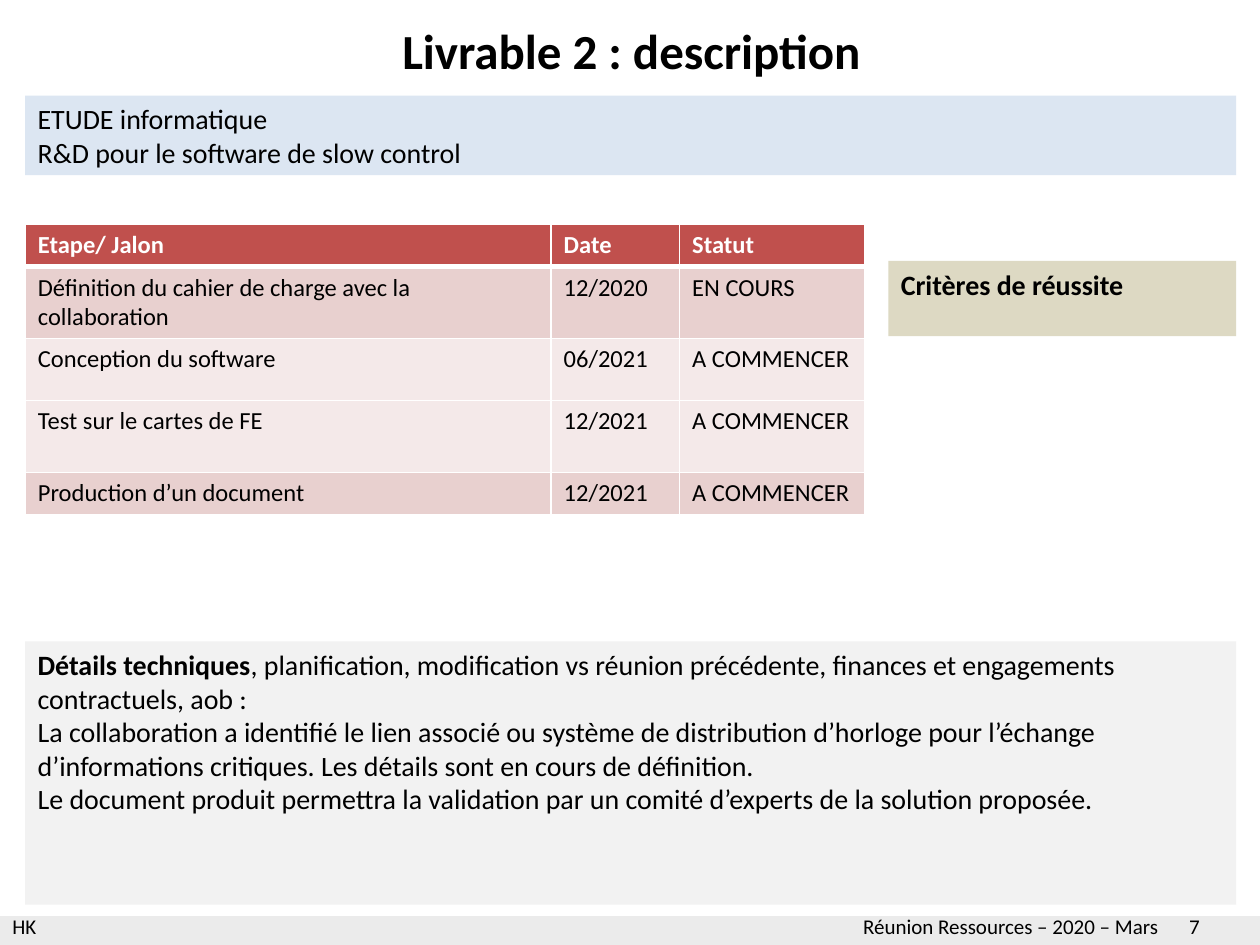
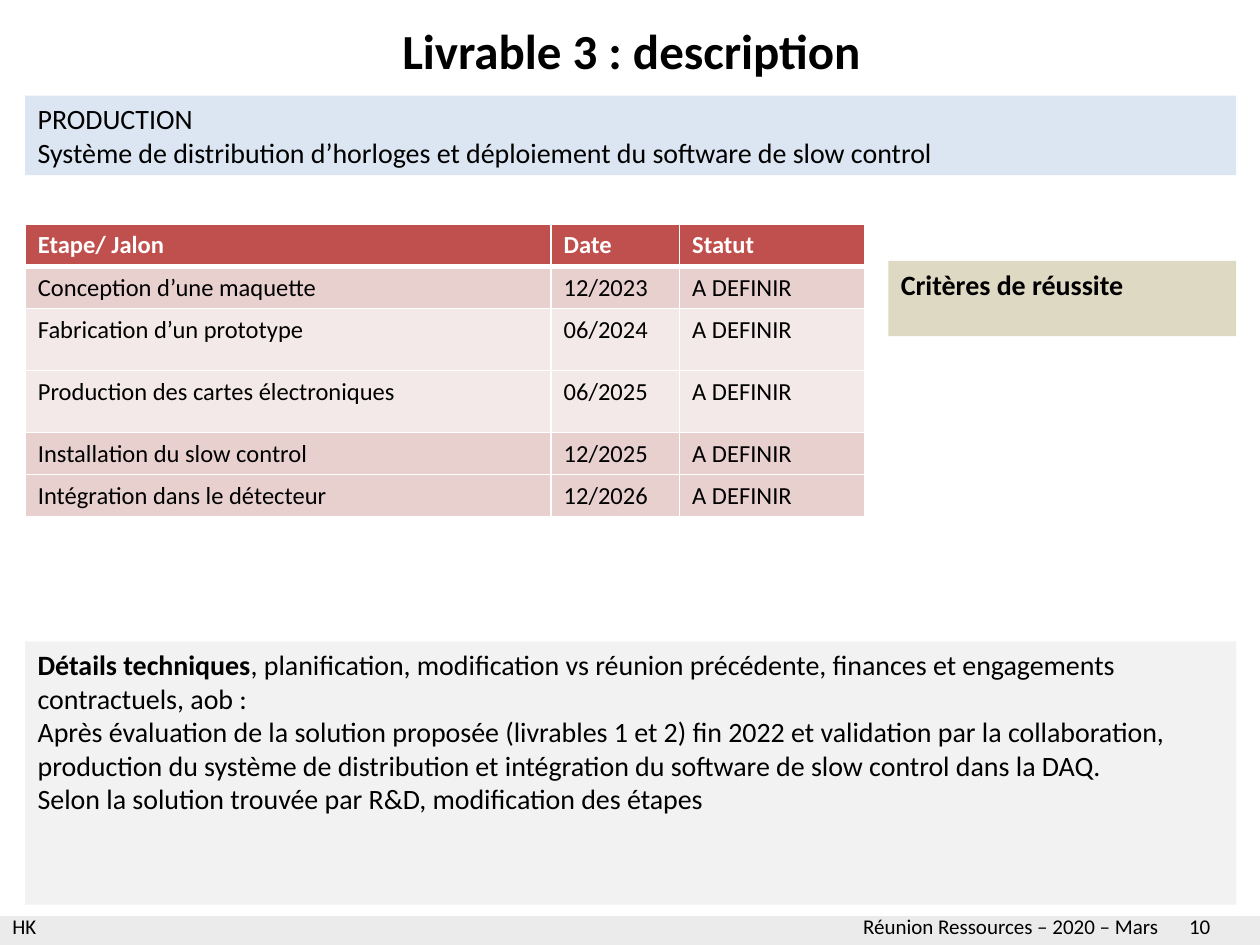
from collections import namedtuple

from lxml.etree import SubElement
from pptx import Presentation
from pptx.dml.color import RGBColor
from pptx.enum.shapes import MSO_SHAPE as Preset
from pptx.enum.text import MSO_ANCHOR as Anchor, PP_ALIGN as Align
from pptx.oxml.ns import qn
from pptx.util import Cm, Pt

# Shared style
FONT = "Calibri"
BLACK = RGBColor(0x00, 0x00, 0x00)
WHITE = RGBColor(0xFF, 0xFF, 0xFF)
BLUE = RGBColor(0xDC, 0xE6, 0xF2)
GREY = RGBColor(0xF2, 0xF2, 0xF2)
SAND = RGBColor(0xDD, 0xD9, 0xC3)
RED = RGBColor(0xC0, 0x50, 0x4D)
PINK = RGBColor(0xE8, 0xD0, 0xCF)
PALE_PINK = RGBColor(0xF4, 0xE9, 0xE9)
FOOTER_GREY = RGBColor(0xD9, 0xD9, 0xD9)

# Page regions, in centimetres
Box = namedtuple("Box", "left top width height")
TITLE = Box(1.3, 0.13, 22.86, 1.75)
SUMMARY = Box(0.51, 1.93, 24.41, 1.6)
MILESTONES = Box(0.51, 4.52, 16.92, 5.8)
CRITERIA = Box(17.91, 5.26, 7.01, 1.52)
DETAILS = Box(0.51, 12.93, 24.41, 5.31)
FOOTER = Box(0, 18.29, 25.4, 0.76)

# Milestone table
HEADINGS = ("Etape/ Jalon", "Date", "Statut")
COLUMN_WIDTHS = (10.6, 2.59, 3.73)
LOW, MEDIUM, TALL = 0.85, 1.25, 1.45
PALE_ROWS = (2, 3)
THIN, THICK = Pt(0.96), Pt(3)

DETAILS_LEAD = "Détails techniques"
DETAILS_TOPICS = (", planification, modification vs réunion précédente, "
                  "finances et engagements contractuels, aob :")

Deliverable = namedtuple("Deliverable", "title page_number summary milestones details")
DELIVERABLES = (
    Deliverable(
        "Livrable 2 : description", 7,
        ("ETUDE informatique", "R&D pour le software de slow control"),
        (("Définition du cahier de charge avec la collaboration", "12/2020", "EN COURS", TALL),
         ("Conception du software", "06/2021", "A COMMENCER", MEDIUM),
         ("Test sur le cartes de FE", "12/2021", "A COMMENCER", TALL),
         ("Production d’un document", "12/2021", "A COMMENCER", LOW)),
        ("La collaboration a identifié le lien associé ou système de distribution d’horloge "
         "pour l’échange d’informations critiques. Les détails sont en cours de définition.",
         "Le document produit permettra la validation par un comité d’experts "
         "de la solution proposée.")),
    Deliverable(
        "Livrable 3 : description", 10,
        ("PRODUCTION",
         "Système de distribution d’horloges et déploiement du software de slow control"),
        (("Conception d’une maquette", "12/2023", "A DEFINIR", LOW),
         ("Fabrication d’un prototype", "06/2024", "A DEFINIR", MEDIUM),
         ("Production des cartes électroniques", "06/2025", "A DEFINIR", MEDIUM),
         ("Installation du slow control", "12/2025", "A DEFINIR", LOW),
         ("Intégration dans le détecteur", "12/2026", "A DEFINIR", LOW)),
        ("Après évaluation de la solution proposée (livrables 1 et 2) fin 2022 et validation "
         "par la collaboration, production du système de distribution et intégration "
         "du software de slow control dans la DAQ.",
         "Selon la solution trouvée par R&D, modification des étapes")),
)


def lengths(box):
    return [Cm(value) for value in box]


def style(font, size, color=BLACK, bold=False):
    font.name, font.size, font.bold = FONT, Pt(size), bold
    font.color.rgb = color


def write(frame, lines, size, color=BLACK, bold=False, align=Align.LEFT):
    """Fill a text frame with one paragraph per line."""
    frame.word_wrap = True
    frame.text = "\n".join(lines)
    for para in frame.paragraphs:
        para.alignment = align
        for span in para.runs:
            style(span.font, size, color, bold)


def add_panel(page, box, fill, lines=(), bold=False):
    panel = page.shapes.add_shape(Preset.RECTANGLE, *lengths(box))
    panel.shadow.inherit = False
    panel.fill.solid()
    panel.fill.fore_color.rgb = fill
    panel.line.fill.background()
    if lines:
        panel.text_frame.vertical_anchor = Anchor.TOP
        write(panel.text_frame, lines, 16, bold=bold)
    return panel


def add_title(page, box, text):
    title = page.shapes.title
    title.left, title.top, title.width, title.height = lengths(box)
    title.text_frame.vertical_anchor = Anchor.MIDDLE
    write(title.text_frame, [text], 28, bold=True, align=Align.CENTER)


def add_details(page, box, lines):
    panel = add_panel(page, box, GREY, (DETAILS_LEAD, *lines))
    opening = panel.text_frame.paragraphs[0]
    opening.runs[0].font.bold = True
    topics = opening.add_run()
    topics.text = DETAILS_TOPICS
    style(topics.font, 16)


def set_borders(cell, top, bottom):
    properties = cell._tc.get_or_add_tcPr()
    for side, width in (("L", THIN), ("R", THIN), ("T", top), ("B", bottom)):
        line = SubElement(properties, qn(f"a:ln{side}"), w=str(int(width)))
        SubElement(SubElement(line, qn("a:solidFill")), qn("a:srgbClr"), val=str(WHITE))


def add_milestones(page, box, milestones):
    rows = ((*HEADINGS, LOW), *milestones)
    table = page.shapes.add_table(len(rows), len(HEADINGS), *lengths(box)).table
    for column, width in zip(table.columns, COLUMN_WIDTHS):
        column.width = Cm(width)
    for index, (*texts, height) in enumerate(rows):
        is_header = index == 0
        fill = RED if is_header else PALE_PINK if index in PALE_ROWS else PINK
        table.rows[index].height = Cm(height)
        for cell, text in zip(table.rows[index].cells, texts):
            set_borders(cell, THICK if index == 1 else THIN, THICK if is_header else THIN)
            cell.fill.solid()
            cell.fill.fore_color.rgb = fill
            write(cell.text_frame, [text], 14, WHITE if is_header else BLACK, is_header)


def add_footer(page, box, page_number):
    band = add_panel(page, Box(box.left, box.top + 0.18, box.width, 0.58), FOOTER_GREY)
    color = band.fill._xPr.find(qn("a:solidFill"))[0]
    SubElement(color, qn("a:alpha"), val="50000")
    labels = ((0, 3.12, "HK"),
              (17.15, 6.5, "Réunion Ressources – 2020 – Mars"),
              (23.72, 1.68, str(page_number)))
    for offset, width, text in labels:
        place = Box(box.left + offset, box.top, width, box.height)
        label = page.shapes.add_textbox(*lengths(place))
        write(label.text_frame, [text], 12)


def add_deliverable(deck, deliverable):
    page = deck.slides.add_slide(deck.slide_layouts.get_by_name("Title Only"))
    add_footer(page, FOOTER, deliverable.page_number)
    add_panel(page, SUMMARY, BLUE, deliverable.summary)
    add_details(page, DETAILS, deliverable.details)
    add_panel(page, CRITERIA, SAND, ["Critères de réussite"], bold=True)
    add_title(page, TITLE, deliverable.title)
    add_milestones(page, MILESTONES, deliverable.milestones)


def main():
    deck = Presentation()
    deck.slide_width, deck.slide_height = Cm(25.4), Cm(19.05)
    for deliverable in DELIVERABLES:
        add_deliverable(deck, deliverable)
    deck.save("out.pptx")


if __name__ == "__main__":
    main()
